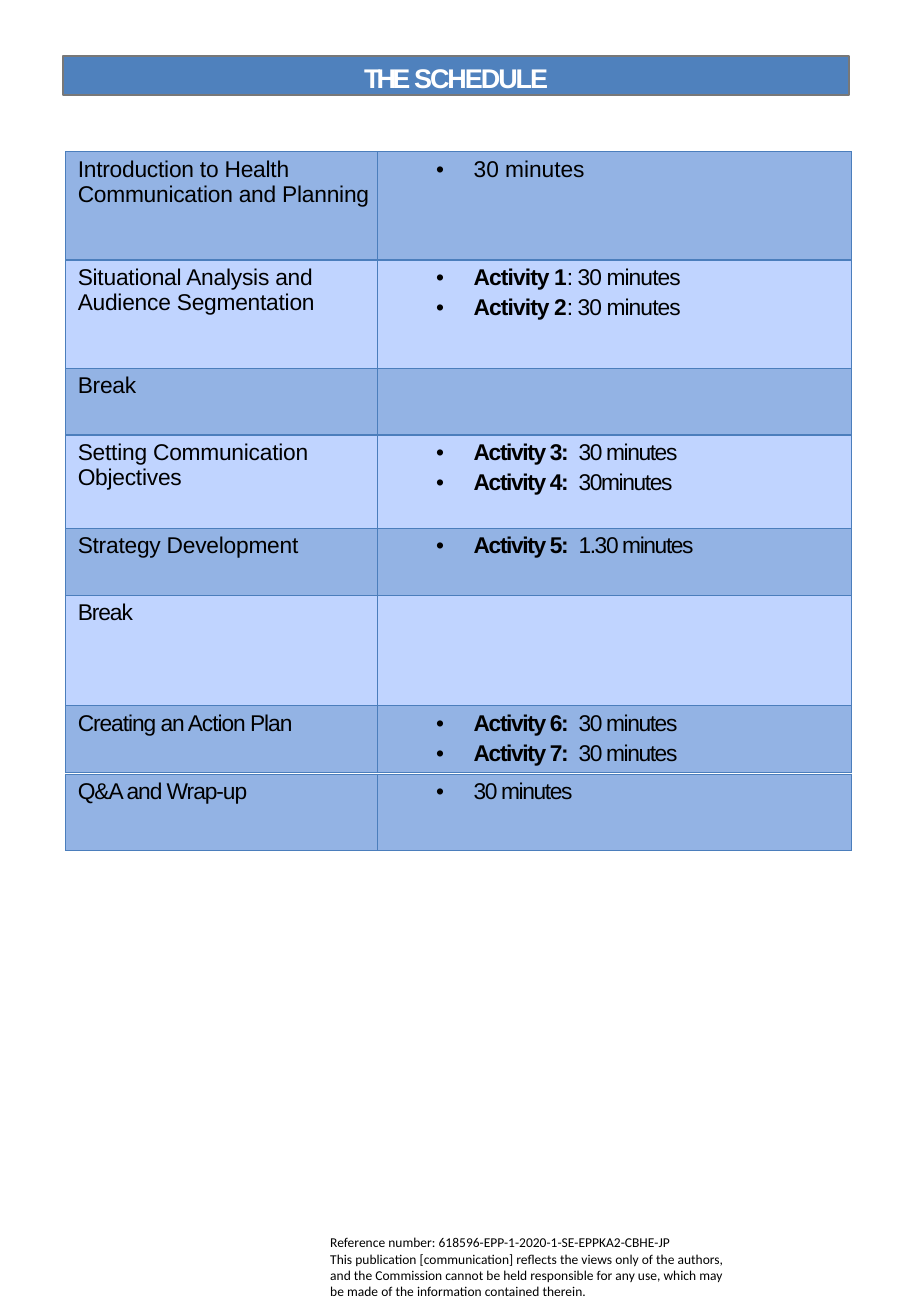
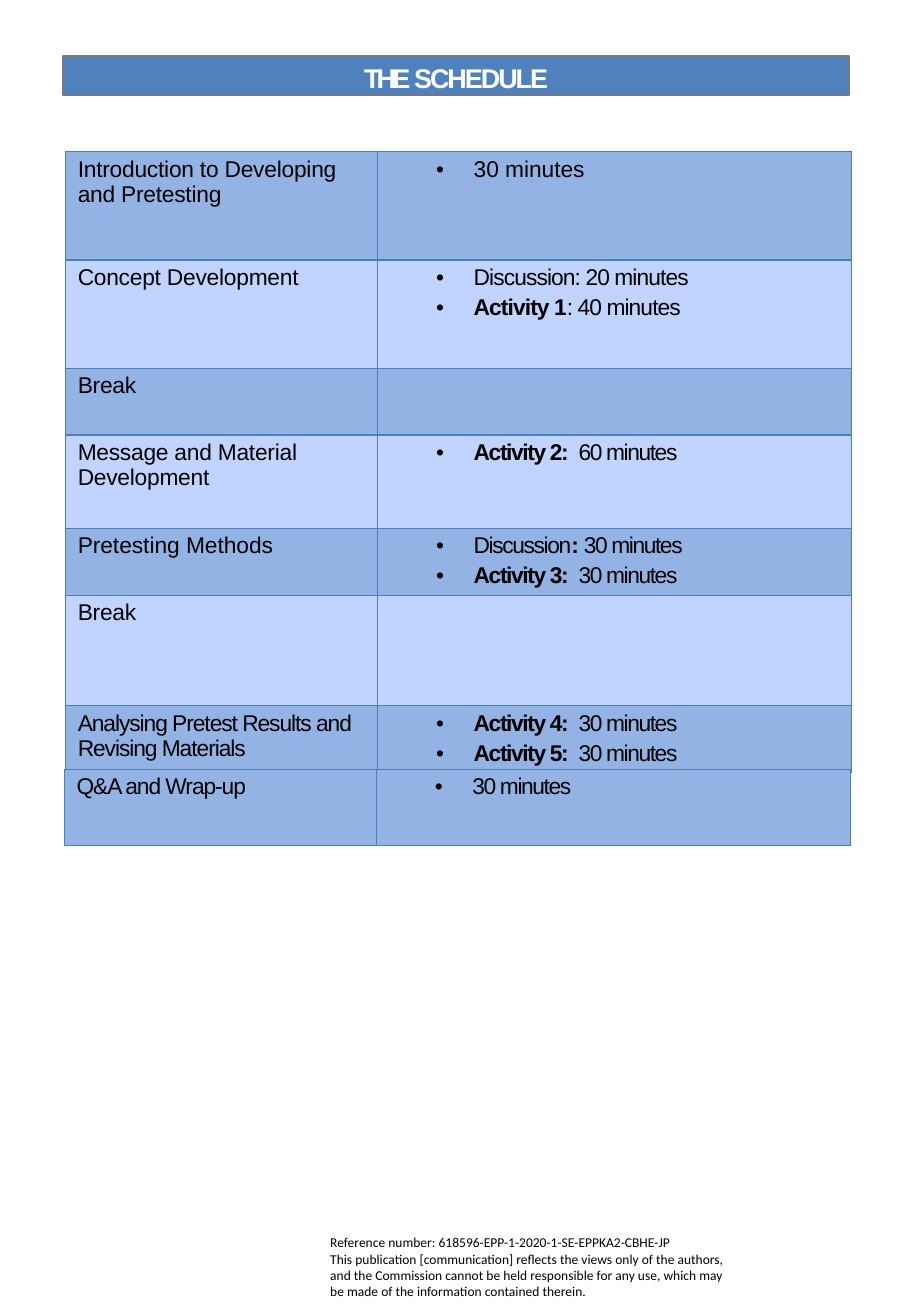
"""Build two schedule slides, each with a title band, two tables and a footer."""
import pptx
import pptx.dml.color
import pptx.enum.shapes
import pptx.enum.text
import pptx.oxml
import pptx.oxml.ns
import pptx.util
from pptx.util import Inches

COLORS = {
    "band": "4F81BD",
    "band_line": "787878",
    "dark_row": "93B3E4",
    "light_row": "C0D4FF",
    "border": "4B7EBC",
    "title": "FFFFFF",
    "text": "000000",
}
COL_WIDTHS = [2.57, 3.9]
ROW_HEIGHTS = [0.89, 0.89, 0.55, 0.77, 0.55, 0.91, 0.55]
WRAP_UP_HEIGHT = 0.63
GAP_SPACING = 2.1
FOOTER = [
    "Reference number: 618596-EPP-1-2020-1-SE-EPPKA2-CBHE-JP",
    "This publication [communication] reflects the views only of the authors, "
    "and the Commission cannot be held responsible for any use, which may be "
    "made of the information contained therein.",
]

# Each row: label, label spacing, bullet items, item spacing.
HEALTH_ROWS = [
    ("Introduction to Health Communication and Planning", -0.1, ["30 minutes"], 0),
    ("Situational Analysis and Audience Segmentation", -0.1,
     ["**Activity 1**: 30 minutes", "**Activity 2**: 30 minutes"], -0.5),
    ("Break", -0.1, [], 0),
    ("Setting Communication Objectives", -0.1,
     ["**Activity 3:** 30 minutes", "**Activity 4:** 30minutes"], -0.8),
    ("Strategy Development", -0.1, ["**Activity 5:** 1.30 minutes"], -0.8),
    ("Break", -0.6, [], 0),
    ("Creating an Action Plan", -0.6,
     ["**Activity 6:** 30 minutes", "**Activity 7:** 30 minutes"], -0.8),
]
PRETEST_ROWS = [
    ("Introduction to Developing and Pretesting", -0.1, ["30 minutes"], 0),
    ("Concept Development", -0.1,
     ["Discussion: 20 minutes", "**Activity 1**: 40 minutes"], -0.5),
    ("Break", -0.1, [], 0),
    ("Message and Material Development", -0.1, ["**Activity 2:** 60 minutes"], -0.8),
    ("Pretesting Methods", 0,
     ["Discussion**: **30 minutes", "**Activity 3:** 30 minutes"], -0.8),
    ("Break", -0.1, [], 0),
    ("Analysing Pretest Results and Revising Materials", -0.6,
     ["**Activity 4:** 30 minutes", "**Activity 5:** 30 minutes"], -0.8),
]
WRAP_UP_ROWS = [("Q&A and Wrap-up", -0.6, ["30 minutes"], -0.8)]


def rgb(name):
    return pptx.dml.color.RGBColor.from_string(COLORS[name])


def add_run(p, text, size, color="text", bold=False, spacing=0, font="Arial"):
    r = p.add_run()
    r.text = text
    r.font.size = pptx.util.Pt(size)
    r.font.name = font
    r.font.bold = bold
    r.font.color.rgb = rgb(color)
    r.font._element.set("spc", str(round(spacing * 100)))


def add_marked_runs(p, text, spacing):
    for i, piece in enumerate(text.split("**")):
        if piece.startswith(" "):
            add_run(p, " ", 13.5, spacing=GAP_SPACING)
            piece = piece[1:]
        if piece:
            add_run(p, piece, 13.5, bold=i % 2 == 1, spacing=spacing)


def set_indent(p, left, hanging=0):
    pPr = p._p.get_or_add_pPr()
    pPr.set("marL", str(Inches(left)))
    pPr.set("indent", str(-Inches(hanging)))
    return pPr


def add_bullet(p):
    pPr = set_indent(p, 0.79, 0.31)
    ns = pptx.oxml.ns.nsdecls("a")
    pPr.append(pptx.oxml.parse_xml(f'<a:buFont {ns} typeface="Arial"/>'))
    pPr.append(pptx.oxml.parse_xml(f'<a:buChar {ns} char="•"/>'))


def style_cell(cell, fill):
    cell.margin_left = cell.margin_right = cell.margin_bottom = 0
    cell.margin_top = Inches(0.04)
    tcPr = cell._tc.get_or_add_tcPr()
    for side in ("lnL", "lnR", "lnT", "lnB"):
        tcPr.append(pptx.oxml.parse_xml(
            f'<a:{side} {pptx.oxml.ns.nsdecls("a")} w="{pptx.util.Pt(0.75)}">'
            f'<a:solidFill><a:srgbClr val="{COLORS["border"]}"/></a:solidFill>'
            f'</a:{side}>'))
    cell.fill.solid()
    cell.fill.fore_color.rgb = rgb(fill)


def add_schedule(s, left, top, rows, heights):
    frame = s.shapes.add_table(len(rows), len(COL_WIDTHS), Inches(left), Inches(top),
                               Inches(sum(COL_WIDTHS)), Inches(sum(heights)))
    table = frame.table
    table.first_row = table.horz_banding = False
    for col, width in zip(table.columns, COL_WIDTHS):
        col.width = Inches(width)
    for i, (label, label_spacing, items, item_spacing) in enumerate(rows):
        table.rows[i].height = Inches(heights[i])
        topic, detail = table.cell(i, 0), table.cell(i, 1)
        for cell in (topic, detail):
            style_cell(cell, "light_row" if i % 2 else "dark_row")
        p = topic.text_frame.paragraphs[0]
        set_indent(p, 0.1)
        add_run(p, label, 13.5, spacing=label_spacing)
        tf = detail.text_frame
        for j, item in enumerate(items):
            p = tf.add_paragraph() if j else tf.paragraphs[0]
            add_bullet(p)
            if j:
                p.space_before = pptx.util.Pt(2.7)
            add_marked_runs(p, item, item_spacing)


def add_title(s):
    sp = s.shapes.add_shape(pptx.enum.shapes.MSO_SHAPE.RECTANGLE, Inches(0.52),
                            Inches(0.46), Inches(6.47), Inches(0.32))
    sp.shadow.inherit = False
    sp.fill.solid()
    sp.fill.fore_color.rgb = rgb("band")
    sp.line.color.rgb = rgb("band_line")
    sp.line.width = pptx.util.Pt(0.96)
    tf = sp.text_frame
    tf.word_wrap = True
    tf.vertical_anchor = pptx.enum.text.MSO_ANCHOR.TOP
    tf.margin_left = tf.margin_right = tf.margin_bottom = 0
    tf.margin_top = Inches(0.05)
    p = tf.paragraphs[0]
    p.alignment = pptx.enum.text.PP_ALIGN.CENTER
    add_run(p, "THE ", 16, "title", True, -2.2)
    add_run(p, "SCHEDULE", 16, "title", True, -1.2)


def add_footer(s):
    sp = s.shapes.add_textbox(Inches(2.62), Inches(10.11), Inches(3.52), Inches(0.64))
    tf = sp.text_frame
    tf.word_wrap = True
    for i, line in enumerate(FOOTER):
        p = tf.add_paragraph() if i else tf.paragraphs[0]
        add_run(p, line, 8, font="Calibri")


def add_slide(prs, rows, wrap_up_left, wrap_up_top):
    s = prs.slides.add_slide(prs.slide_layouts[6])
    add_footer(s)
    add_schedule(s, 0.54, 1.25, rows, ROW_HEIGHTS)
    add_title(s)
    add_schedule(s, wrap_up_left, wrap_up_top, WRAP_UP_ROWS, [WRAP_UP_HEIGHT])


def main():
    prs = pptx.Presentation()
    prs.slide_width, prs.slide_height = Inches(7.5), Inches(10.83)
    add_slide(prs, HEALTH_ROWS, 0.54, 6.37)
    add_slide(prs, PRETEST_ROWS, 0.53, 6.33)
    prs.save("out.pptx")


if __name__ == "__main__":
    main()
